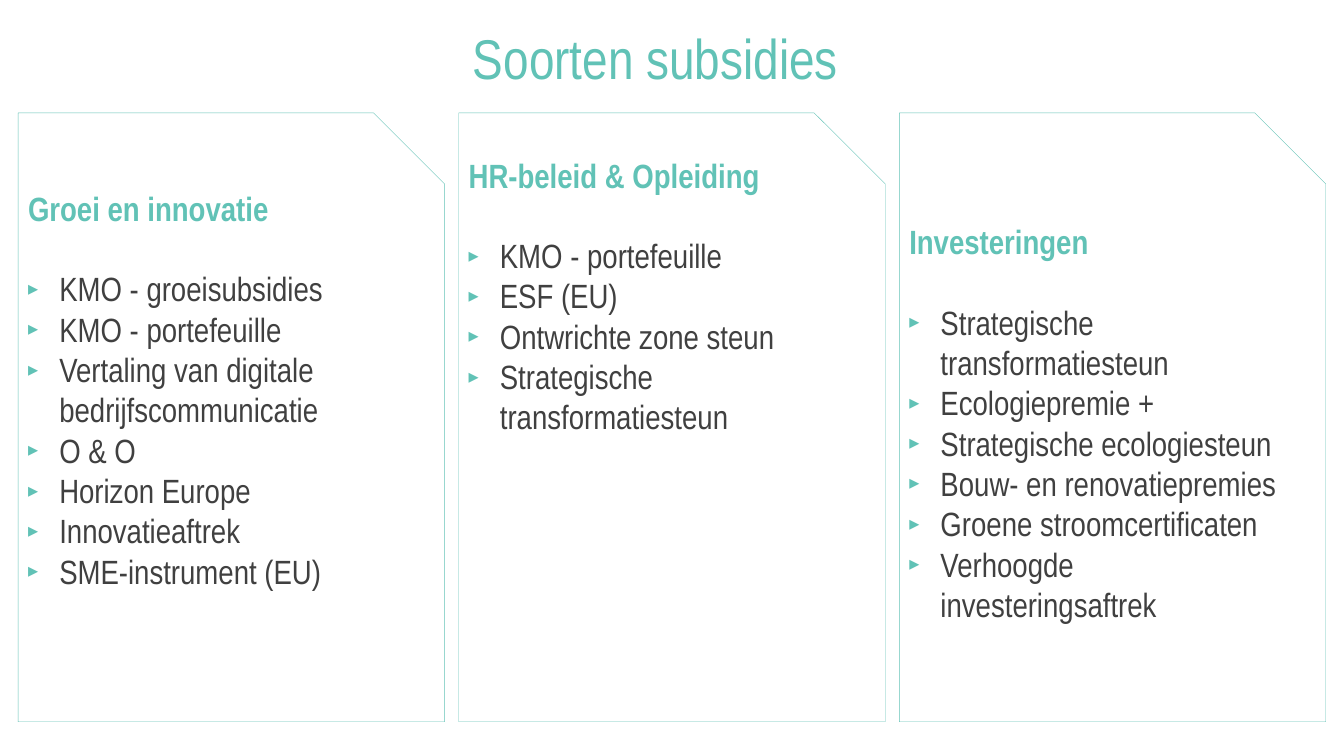
from dataclasses import dataclass

from lxml.etree import SubElement
from pptx import Presentation
from pptx.dml.color import RGBColor
from pptx.enum.shapes import MSO_SHAPE
from pptx.enum.text import MSO_ANCHOR, PP_ALIGN
from pptx.oxml.ns import qn
from pptx.util import Inches, Pt


@dataclass(frozen=True)
class Theme:
    font: str = "Arial Narrow"
    accent: str = "61C2B6"
    body: str = "404040"
    panel: str = "FFFFFF"
    panel_opacity: int = 85
    title_size: int = 40
    text_size: int = 24
    heading_gap: float = 28.8
    outline: float = 0.25
    bullet: str = "▸"
    bullet_percent: int = 60
    bullet_indent: float = 0.31


THEME = Theme()

PANEL_LEFT, PANEL_TOP = 0.18, 1.12
PANEL_WIDTH, PANEL_HEIGHT = 4.23, 6.04
PANEL_STEP = 4.37

# Heading, space above the heading in inches, subsidies
PANELS = [
    ("Groei en innovatie", 0.39, [
        "KMO - groeisubsidies",
        "KMO - portefeuille",
        "Vertaling van digitale bedrijfscommunicatie",
        "O & O",
        "Horizon Europe",
        "Innovatieaftrek",
        "SME-instrument (EU)",
    ]),
    ("HR-beleid & Opleiding", 0.06, [
        "KMO - portefeuille",
        "ESF (EU)",
        "Ontwrichte zone steun",
        "Strategische transformatiesteun",
    ]),
    ("Investeringen", 0.72, [
        "Strategische transformatiesteun",
        "Ecologiepremie +",
        "Strategische ecologiesteun",
        "Bouw- en renovatiepremies",
        "Groene stroomcertificaten",
        "Verhoogde investeringsaftrek",
    ]),
]


def apply_format(target, values):
    for name, value in values.items():
        setattr(target, name, value)


def write_paragraph(paragraph, text, size, color, bold=False, alignment=PP_ALIGN.LEFT):
    paragraph.text = text
    paragraph.alignment = alignment
    font = paragraph.runs[0].font
    apply_format(font, {"name": THEME.font, "size": Pt(size), "bold": bold})
    font.color.rgb = RGBColor.from_string(color)


def add_bullet(paragraph):
    properties = paragraph._p.get_or_add_pPr()
    indent = Inches(THEME.bullet_indent)
    properties.set("marL", str(indent))
    properties.set("indent", str(-indent))
    color = SubElement(properties, qn("a:buClr"))
    SubElement(color, qn("a:srgbClr"), val=THEME.accent)
    SubElement(properties, qn("a:buSzPct"), val=str(THEME.bullet_percent * 1000))
    SubElement(properties, qn("a:buFont"), typeface="Arial")
    SubElement(properties, qn("a:buChar"), char=THEME.bullet)


def add_title(slide, left, top, width, height, text):
    box = slide.shapes.add_textbox(Inches(left), Inches(top), Inches(width), Inches(height))
    frame = box.text_frame
    apply_format(frame, {"word_wrap": True, "vertical_anchor": MSO_ANCHOR.MIDDLE})
    write_paragraph(frame.paragraphs[0], text, THEME.title_size, THEME.accent,
                    alignment=PP_ALIGN.CENTER)


def add_panel(slide, left, top, width, height, heading, space_above, subsidies):
    """Draw a panel with a snipped corner, a heading and a bulleted list."""
    panel = slide.shapes.add_shape(MSO_SHAPE.SNIP_1_RECTANGLE, Inches(left), Inches(top),
                                   Inches(width), Inches(height))
    panel.shadow.inherit = False
    panel.fill.solid()
    panel.fill.fore_color.rgb = RGBColor.from_string(THEME.panel)
    fill_color = panel._element.spPr.find(qn("a:solidFill")).find(qn("a:srgbClr"))
    SubElement(fill_color, qn("a:alpha"), val=str(THEME.panel_opacity * 1000))
    panel.line.color.rgb = RGBColor.from_string(THEME.accent)
    panel.line.width = Pt(THEME.outline)

    frame = panel.text_frame
    apply_format(frame, {"word_wrap": True, "vertical_anchor": MSO_ANCHOR.TOP,
                         "margin_top": Inches(space_above)})
    title = frame.paragraphs[0]
    write_paragraph(title, heading, THEME.text_size, THEME.accent, bold=True)
    title.space_after = Pt(THEME.heading_gap)
    for subsidy in subsidies:
        paragraph = frame.add_paragraph()
        add_bullet(paragraph)
        write_paragraph(paragraph, subsidy, THEME.text_size, THEME.body)


def main():
    presentation = Presentation()
    apply_format(presentation, {"slide_width": Inches(13.33), "slide_height": Inches(7.5)})
    slide = presentation.slides.add_slide(presentation.slide_layouts[6])
    add_title(slide, 0.75, 0.13, 11.5, 0.88, "Soorten subsidies")
    for index, (heading, space_above, subsidies) in enumerate(PANELS):
        add_panel(slide, PANEL_LEFT + index * PANEL_STEP, PANEL_TOP, PANEL_WIDTH,
                  PANEL_HEIGHT, heading, space_above, subsidies)
    presentation.save("out.pptx")


if __name__ == "__main__":
    main()
